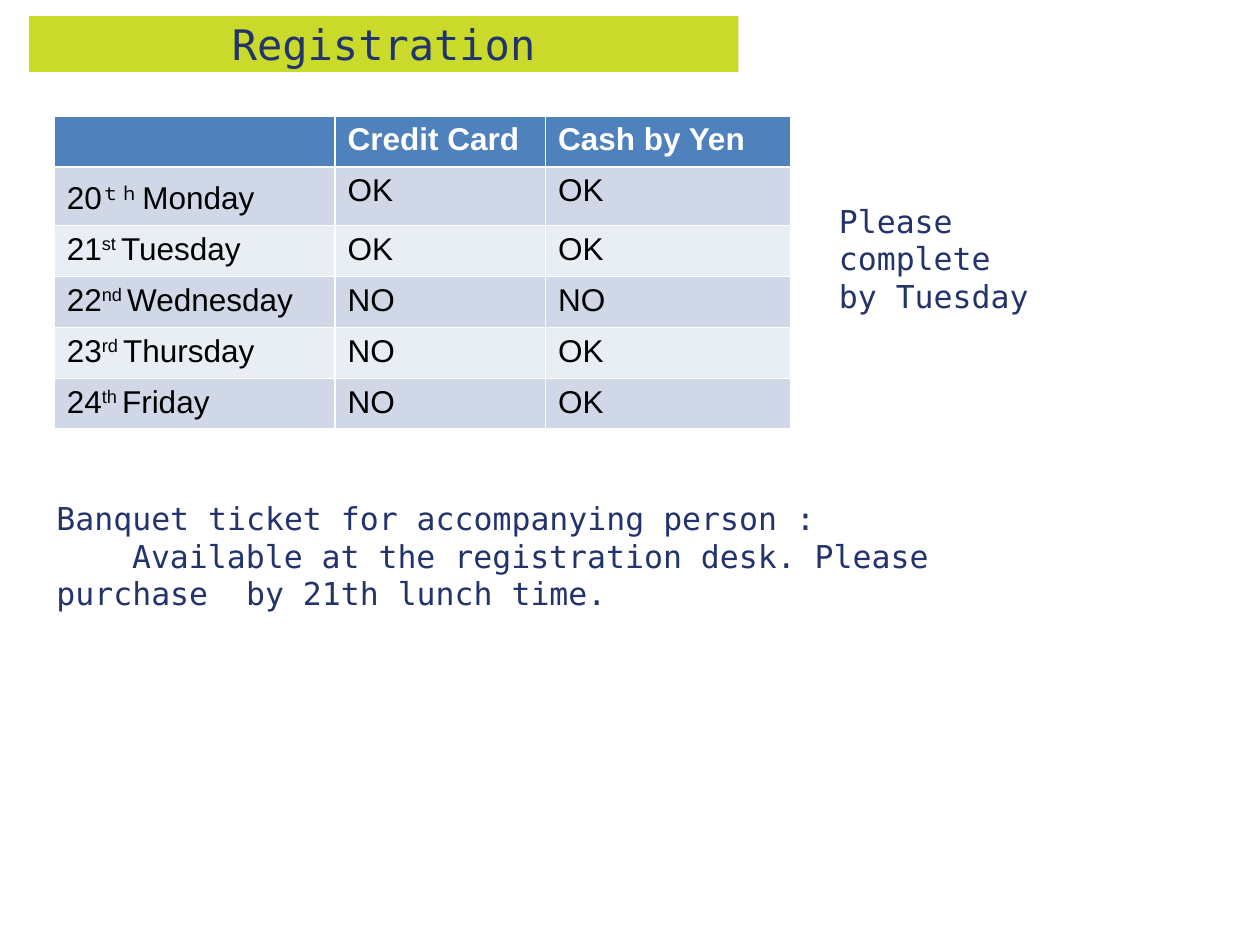
"""Build the registration slide with its payment table and notices."""
from pptx import Presentation
from pptx.dml.color import RGBColor as RGB
from pptx.enum.text import MSO_ANCHOR as Anchor, MSO_AUTO_SIZE as AutoSize, PP_ALIGN as Align
from pptx.util import Inches, Pt

THEME = {
    "navy": RGB(0x23, 0x34, 0x6C), "lime": RGB(0xC9, 0xDA, 0x2B),
    "header": RGB(0x4F, 0x81, 0xBD), "white": RGB(255, 255, 255), "black": RGB(0, 0, 0),
    "bands": (RGB(0xD0, 0xD8, 0xE8), RGB(0xE9, 0xED, 0xF4)),
    "mono": "DejaVu Sans Mono", "sans": "Arial", "title": Pt(24), "text": Pt(18),
}

deck = Presentation()
deck.slide_width, deck.slide_height = Inches(10), Inches(7.5)
slide = deck.slides.add_slide(deck.slide_layouts[5])


def area(left, top, width, height):
    """Turn percentages of the slide into a left, top, width and height."""
    across, down = deck.slide_width / 100, deck.slide_height / 100
    return int(left * across), int(top * down), int(width * across), int(height * down)


def style(paragraph, font, size, color, bold=False):
    """Format every run of a paragraph."""
    for run in paragraph.runs:
        run.font.name, run.font.size, run.font.bold = font, size, bold
        run.font.color.rgb = color


title = slide.shapes.title
title.left, title.top, title.width, title.height = area(2.3, 1.7, 56.3, 5.9)
title.fill.solid()
title.fill.fore_color.rgb = THEME["lime"]
title.text_frame.text = "Registration"
title.text_frame.auto_size = AutoSize.NONE
title.text_frame.vertical_anchor = Anchor.MIDDLE
heading = title.text_frame.paragraphs[0]
heading.alignment = Align.CENTER
style(heading, THEME["mono"], THEME["title"], THEME["navy"])

days = [
    ("20", "ｔｈ ", "Monday", "OK", "OK"),
    ("21", "st ", "Tuesday", "OK", "OK"),
    ("22", "nd ", "Wednesday", "NO", "NO"),
    ("23", "rd ", "Thursday", "NO", "OK"),
    ("24", "th ", "Friday", "NO", "OK"),
]
payments = slide.shapes.add_table(len(days) + 1, 3, *area(4.3, 12.27, 58.5, 32.4)).table
for column, width in zip(payments.columns, (2.23, 1.67, 1.95)):
    column.width = Inches(width)

for index, label in enumerate(("", "Credit Card", "Cash by Yen")):
    cell = payments.cell(0, index)
    cell.text = label
    cell.fill.solid()
    cell.fill.fore_color.rgb = THEME["header"]
    style(cell.text_frame.paragraphs[0], THEME["sans"], THEME["text"], THEME["white"], True)

for row, (number, suffix, weekday, *methods) in enumerate(days, 1):
    for index, parts in enumerate([(number, suffix, weekday), *zip(methods)]):
        cell = payments.cell(row, index)
        cell.fill.solid()
        cell.fill.fore_color.rgb = THEME["bands"][(row - 1) % 2]
        entry = cell.text_frame.paragraphs[0]
        for part in parts:
            entry.add_run().text = part
        style(entry, THEME["sans"], THEME["text"], THEME["black"])
    ordinal = payments.cell(row, 0).text_frame.paragraphs[0].runs[1]
    ordinal.font._element.set("baseline", "30000")

notices = [
    (area(65.6, 20.67, 21.4, 13.2), "Please complete\nby Tuesday", 0),
    (area(3.5, 52.13, 83.4, 13.2),
     "Banquet ticket for accompanying person :\n"
     "Available at the registration desk. Please purchase  by 21th lunch time.", 0.6),
]
for place, wording, indent in notices:
    notice = slide.shapes.add_textbox(*place).text_frame
    notice.word_wrap = True
    notice.text = wording
    for line in notice.paragraphs:
        style(line, THEME["mono"], THEME["text"], THEME["navy"])
    notice.paragraphs[-1]._p.get_or_add_pPr().set("indent", str(Inches(indent)))

deck.save("out.pptx")
